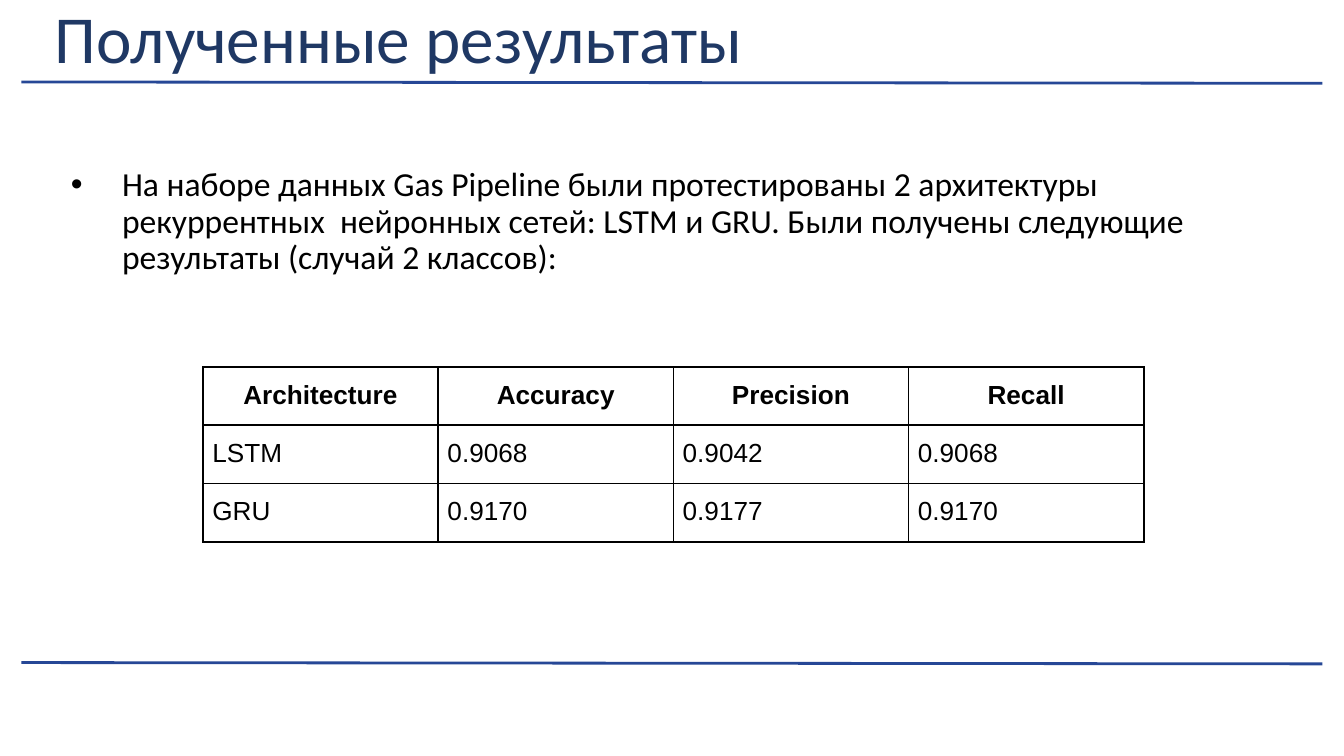
from lxml import etree
from pptx import Presentation
from pptx import util as u
from pptx.dml.color import RGBColor
from pptx.enum import shapes, text
from pptx.oxml import ns

WIDE = 10
HIGH = WIDE * 9 / 16
NAVY = RGBColor(0x1F, 0x38, 0x64)
BLUE = RGBColor(0x26, 0x47, 0x96)
BLACK = RGBColor(0, 0, 0)
LEFT, SPAN = 0.31, 9.4
ROWS = [
    ("Architecture", "Accuracy", "Precision", "Recall"),
    ("LSTM", "0.9068", "0.9042", "0.9068"),
    ("GRU", "0.9170", "0.9177", "0.9170"),
]


def inch(box):
    """Turn a box in inches into lengths."""
    return [u.Inches(v) for v in box]


def node(root, tag, **attrs):
    """Add a drawing element to root."""
    return etree.SubElement(root, ns.qn(tag), attrs)


def write(para, words, font, size, color, bold=False):
    """Add one styled run to a paragraph."""
    run = para.add_run()
    run.text = words
    run.font.name = font
    run.font.size = u.Pt(size)
    run.font.bold = bold
    run.font.color.rgb = color


def frame(slide, box):
    """Add a wrapping text box and return its frame."""
    area = slide.shapes.add_textbox(*inch(box)).text_frame
    area.word_wrap = True
    area.paragraphs[0].line_spacing = 0.9
    return area


def rule(slide, box):
    """Draw a slightly sloped rule across the box."""
    x, y, w, h = box
    line = slide.shapes.add_connector(
        shapes.MSO_CONNECTOR.STRAIGHT, *inch((x, y, x + w, y + h)))
    line.line.color.rgb = BLUE
    line.line.width = u.Pt(1.5)
    node(line._element.spPr, "a:effectLst")


def title(slide, box, words):
    """Place the title in the upper part of its box."""
    area = frame(slide, box)
    area.vertical_anchor = text.MSO_ANCHOR.MIDDLE
    area.margin_top = 0
    area.margin_bottom = u.Inches(box[3] * 0.59)
    write(area.paragraphs[0], words, "Calibri", 36, NAVY)


def body(slide, box, words):
    """Place the bulleted statement."""
    para = frame(slide, box).paragraphs[0]
    props = para._p.get_or_add_pPr()
    props.set("marL", str(u.Inches(0.5)))
    props.set("indent", str(u.Inches(-0.38)))
    tint = node(props, "a:buClr")
    node(tint, "a:srgbClr", val=str(BLACK))
    node(props, "a:buFont", typeface="Arial")
    node(props, "a:buChar", char="•")
    write(para, words, "Calibri", 18, BLACK)


def border(cell):
    """Give a cell thin black edges and no fill."""
    props = cell._tc.get_or_add_tcPr()
    for side in ("a:lnL", "a:lnR", "a:lnT", "a:lnB"):
        edge = node(props, side, w=str(u.Pt(1)))
        fill = node(edge, "a:solidFill")
        node(fill, "a:srgbClr", val=str(BLACK))
    cell.fill.background()


def scores(slide, box, rows):
    """Place the table of scores on an even grid."""
    grid = slide.shapes.add_table(len(rows), len(rows[0]), *inch(box)).table
    grid.horz_banding = False
    for r, row in enumerate(rows):
        for c, words in enumerate(row):
            cell = grid.cell(r, c)
            cell.margin_left = cell.margin_right = u.Inches(0.07)
            cell.margin_top = cell.margin_bottom = u.Inches(0.1)
            para = cell.text_frame.paragraphs[0]
            if r == 0:
                para.alignment = text.PP_ALIGN.CENTER
            write(para, words, "Arial", 14, BLACK, r == 0)
            border(cell)


def main():
    """Build and save the slide."""
    deck = Presentation()
    deck.slide_width, deck.slide_height = inch((WIDE, HIGH))
    slide = deck.slides.add_slide(deck.slide_layouts[6])
    for y in (4.93, 0.61):
        rule(slide, (0.16, y, WIDE - 2 * 0.16, 0.01))
    title(slide, (LEFT, 0.08, SPAN, 1.12), "Полученные результаты")
    body(slide, (LEFT, 1.2, SPAN, 3.65),
         "На наборе данных Gas Pipeline были протестированы 2 архитектуры "
         "рекуррентных  нейронных сетей: LSTM и GRU. Были получены "
         "следующие результаты (случай 2 классов):")
    scores(slide, (1.51, 2.73, 7, 0.21 * len(ROWS)), ROWS)
    deck.save("out.pptx")


if __name__ == "__main__":
    main()
